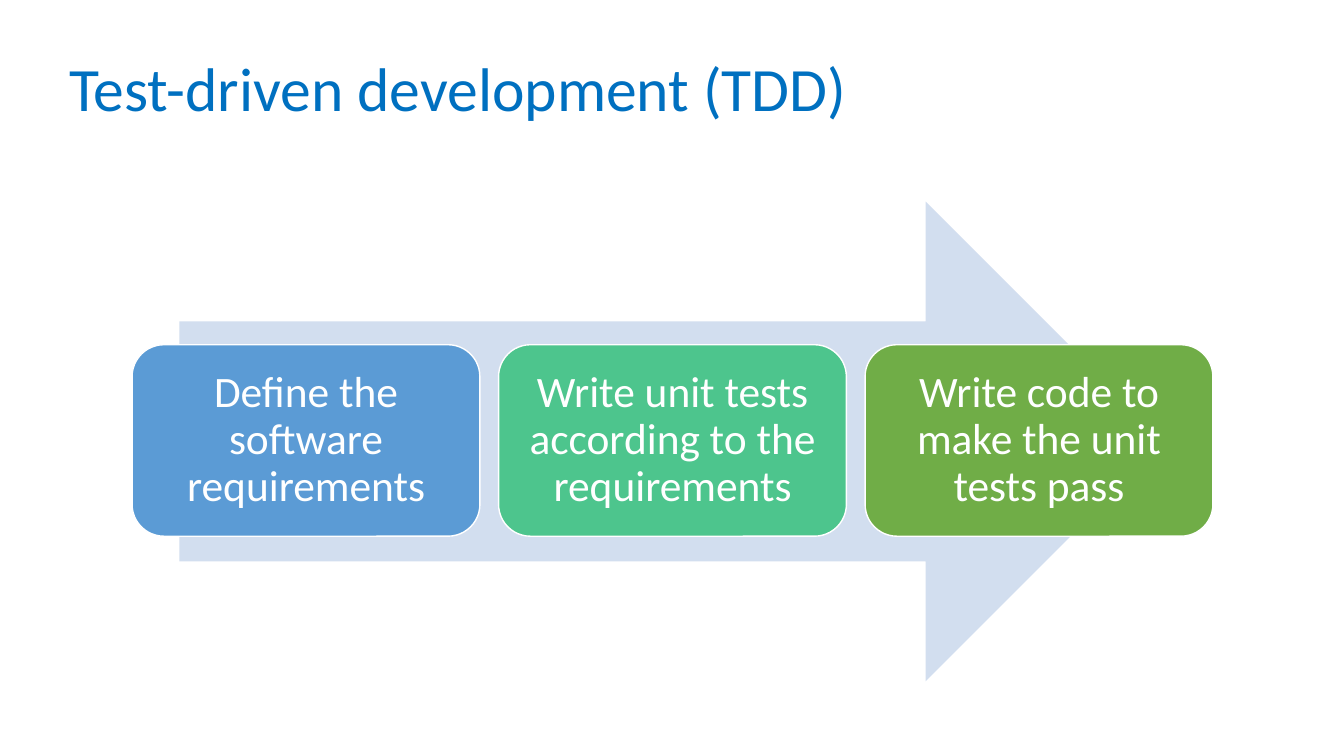
from pptx import Presentation
from pptx.dml.color import RGBColor
from pptx.enum import shapes, text
from pptx.util import Inches, Pt

FONT = "Calibri"
COLORS = {
    "title": "0070C0",
    "arrow": "D2DEEF",
    "white": "FFFFFF",
    "blue": "5B9BD5",
    "teal": "4DC58D",
    "green": "70AD47",
}
STEPS = [
    ("Define the software requirements", "blue"),
    ("Write unit tests according to the requirements", "teal"),
    ("Write code to make the unit tests pass", "green"),
]
FIRST, LAST = 1.31, 8.58  # left edges of the outer steps


def color(name):
    return RGBColor.from_string(COLORS[name])


def set_text(shape, words, size, tint, align, inset):
    frame = shape.text_frame
    frame.text = words
    frame.word_wrap = True
    frame.vertical_anchor = text.MSO_ANCHOR.MIDDLE
    frame.margin_left = frame.margin_right = Inches(inset[0])
    frame.margin_top = frame.margin_bottom = Inches(inset[1])
    para = frame.paragraphs[0]
    para.alignment = align
    para.line_spacing = 0.9
    font = para.runs[0].font
    font.name = FONT
    font.size = Pt(size)
    font.color.rgb = color(tint)


def add_title(slide, words):
    box = slide.shapes.add_textbox(
        Inches(0.59), Inches(0.4), Inches(11.83), Inches(1.01))
    set_text(box, words, 44, "title", text.PP_ALIGN.LEFT, (0.1, 0.05))


def add_block(slide, kind, left, top, width, height, fill):
    block = slide.shapes.add_shape(
        kind, Inches(left), Inches(top), Inches(width), Inches(height))
    block.shadow.inherit = False
    block.fill.solid()
    block.fill.fore_color.rgb = color(fill)
    block.line.fill.background()
    return block


def add_step(slide, left, words, fill):
    step = add_block(slide, shapes.MSO_SHAPE.ROUNDED_RECTANGLE,
                     left, 3.42, 3.45, 1.9, fill)
    step.line.color.rgb = color("white")
    step.line.width = Pt(1)
    set_text(step, words, 31, "white", text.PP_ALIGN.CENTER, (0.13, 0.13))


def main():
    deck = Presentation()
    deck.slide_width = Inches(13.33)
    deck.slide_height = Inches(7.5)
    slide = deck.slides.add_slide(deck.slide_layouts[6])

    add_title(slide, "Test-driven development (TDD)")

    # Arrow behind the steps
    add_block(slide, shapes.MSO_SHAPE.RIGHT_ARROW, 1.78, 2, 9.78, 4.76, "arrow")

    # Evenly spaced steps
    pitch = (LAST - FIRST) / (len(STEPS) - 1)
    for i, (words, fill) in enumerate(STEPS):
        add_step(slide, FIRST + i * pitch, words, fill)

    deck.save("out.pptx")


if __name__ == "__main__":
    main()
